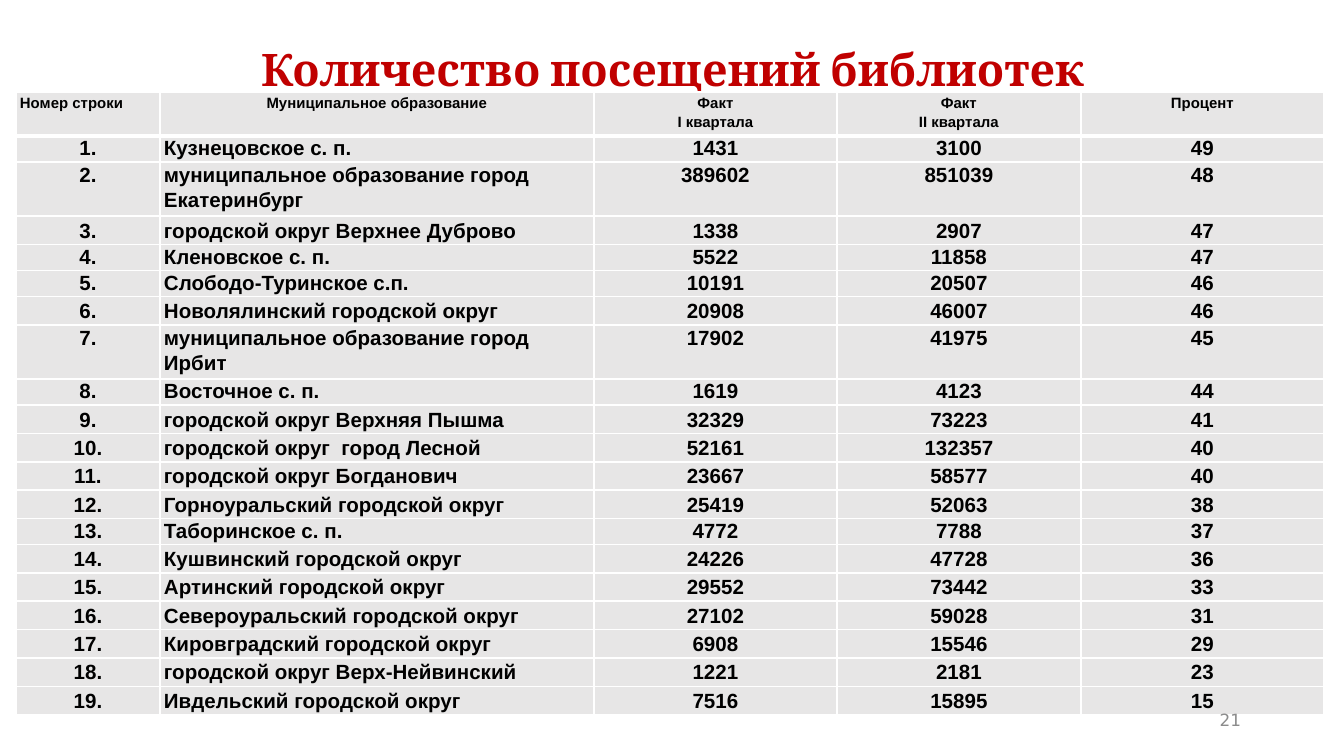
from lxml.etree import SubElement
from pptx import Presentation
from pptx.dml.color import RGBColor
from pptx.enum.text import MSO_ANCHOR, PP_ALIGN
from pptx.oxml.ns import qn
from pptx.util import Pt

TITLE = "Количество посещений библиотек"
PAGE_NUMBER = "21"
HEADINGS = ("Номер строки", "Муниципальное образование", "Факт\nI квартала",
            "Факт\nII квартала", "Процент")
MUNICIPALITIES = [
    ("Кузнецовское с. п.", 1431, 3100, 49),
    ("муниципальное образование город Екатеринбург", 389602, 851039, 48),
    ("городской округ Верхнее Дуброво", 1338, 2907, 47),
    ("Кленовское с. п.", 5522, 11858, 47),
    ("Слободо-Туринское с.п.", 10191, 20507, 46),
    ("Новолялинский городской округ", 20908, 46007, 46),
    ("муниципальное образование город Ирбит", 17902, 41975, 45),
    ("Восточное с. п.", 1619, 4123, 44),
    ("городской округ Верхняя Пышма", 32329, 73223, 41),
    ("городской округ  город Лесной", 52161, 132357, 40),
    ("городской округ Богданович", 23667, 58577, 40),
    ("Горноуральский городской округ", 25419, 52063, 38),
    ("Таборинское с. п.", 4772, 7788, 37),
    ("Кушвинский городской округ", 24226, 47728, 36),
    ("Артинский городской округ", 29552, 73442, 33),
    ("Североуральский городской округ", 27102, 59028, 31),
    ("Кировградский городской округ", 6908, 15546, 29),
    ("городской округ Верх-Нейвинский", 1221, 2181, 23),
    ("Ивдельский городской округ", 7516, 15895, 15),
]

PX = 914400 / 134.4
SLIDE_SIZE = (1344, 756)
TITLE_BOX = (93, 40, 1159, 63)
NUMBER_BOX = (949, 700, 302, 40)
TABLE_LEFT, TABLE_TOP = 16, 92
COLUMN_WIDTHS = (144, 434, 243, 244, 243)
LOW_ROWS = (1, 4, 5, 8, 13)
WRAPPED_ROWS = (2, 7)
HEADER_LAYOUT, LOW_LAYOUT = (44, 1.15), (26, 1.05)
LINE_LAYOUT, WRAPPED_LAYOUT = (28, 1.15), (54, 1.1)

RED = RGBColor(0xC0, 0x00, 0x00)
GREY = RGBColor(0x8C, 0x8C, 0x8C)
BLACK = RGBColor(0x00, 0x00, 0x00)
WHITE = RGBColor(0xFF, 0xFF, 0xFF)
CELL_GREY = RGBColor(0xE7, 0xE6, 0xE6)


def px(length):
    """Turn px into EMU."""
    return round(length * PX)


def write(frame, text, font, size, color, bold, align, spacing):
    """Fill the first paragraph of a text frame, one run per line."""
    paragraph = frame.paragraphs[0]
    paragraph.alignment, paragraph.line_spacing = align, spacing
    for index, line in enumerate(text.split("\n")):
        if index:
            paragraph.add_line_break()
        run = paragraph.add_run()
        run.text = line
        run.font.name, run.font.size, run.font.bold = font, Pt(size), bold
        run.font.color.rgb = color


def add_label(slide, box, *style):
    """Add a vertically centred text box."""
    frame = slide.shapes.add_textbox(*map(px, box)).text_frame
    frame.word_wrap = True
    frame.vertical_anchor = MSO_ANCHOR.MIDDLE
    frame.margin_left = frame.margin_right = px(10)
    frame.margin_top = frame.margin_bottom = px(5)
    write(frame, *style)


def add_borders(cell, widths):
    """Draw the white cell borders, given side by side in points."""
    properties = cell._tc.get_or_add_tcPr()
    for side, width in widths.items():
        line = SubElement(properties, qn(f"a:ln{side}"), w=str(Pt(width)))
        fill = SubElement(line, qn("a:solidFill"))
        SubElement(fill, qn("a:srgbClr"), val=str(WHITE))


def row_layout(row):
    """Return the height in px and the line spacing of a table row."""
    if row == 0:
        return HEADER_LAYOUT
    if row in WRAPPED_ROWS:
        return WRAPPED_LAYOUT
    return LOW_LAYOUT if row in LOW_ROWS else LINE_LAYOUT


def add_visits_table(slide):
    """Add the table of library visits."""
    rows = [HEADINGS] + [(f"{number}.", *entry) for number, entry in enumerate(MUNICIPALITIES, 1)]
    layouts = [row_layout(row) for row in range(len(rows))]
    size = (sum(COLUMN_WIDTHS), sum(height for height, _ in layouts))
    table = slide.shapes.add_table(len(rows), len(HEADINGS),
                                   *map(px, (TABLE_LEFT, TABLE_TOP, *size))).table
    for column, width in zip(table.columns, COLUMN_WIDTHS):
        column.width = px(width)
    for row, (values, (height, spacing)) in enumerate(zip(rows, layouts)):
        table.rows[row].height = px(height)
        left_column = 0 if row == 0 else 1
        for column, value in enumerate(values):
            cell = table.cell(row, column)
            cell.margin_left = cell.margin_right = px(4)
            cell.margin_top = cell.margin_bottom = 0
            add_borders(cell, {"L": 1, "R": 1, "T": 3 if row == 1 else 1,
                               "B": 3 if row == 0 else 1})
            cell.fill.solid()
            cell.fill.fore_color.rgb = CELL_GREY
            align = PP_ALIGN.LEFT if column == left_column else PP_ALIGN.CENTER
            write(cell.text_frame, str(value), "Arial", 8 if row == 0 else 11,
                  BLACK, True, align, spacing)


def main():
    """Build the slide and save it."""
    deck = Presentation()
    deck.slide_width, deck.slide_height = map(px, SLIDE_SIZE)
    slide = deck.slides.add_slide(deck.slide_layouts[6])
    add_label(slide, TITLE_BOX, TITLE, "Cambria", 24, RED, True, PP_ALIGN.CENTER, 0.9)
    add_visits_table(slide)
    add_label(slide, NUMBER_BOX, PAGE_NUMBER, "DejaVu Sans", 9, GREY, False, PP_ALIGN.RIGHT, 1.0)
    deck.save("out.pptx")


if __name__ == "__main__":
    main()
